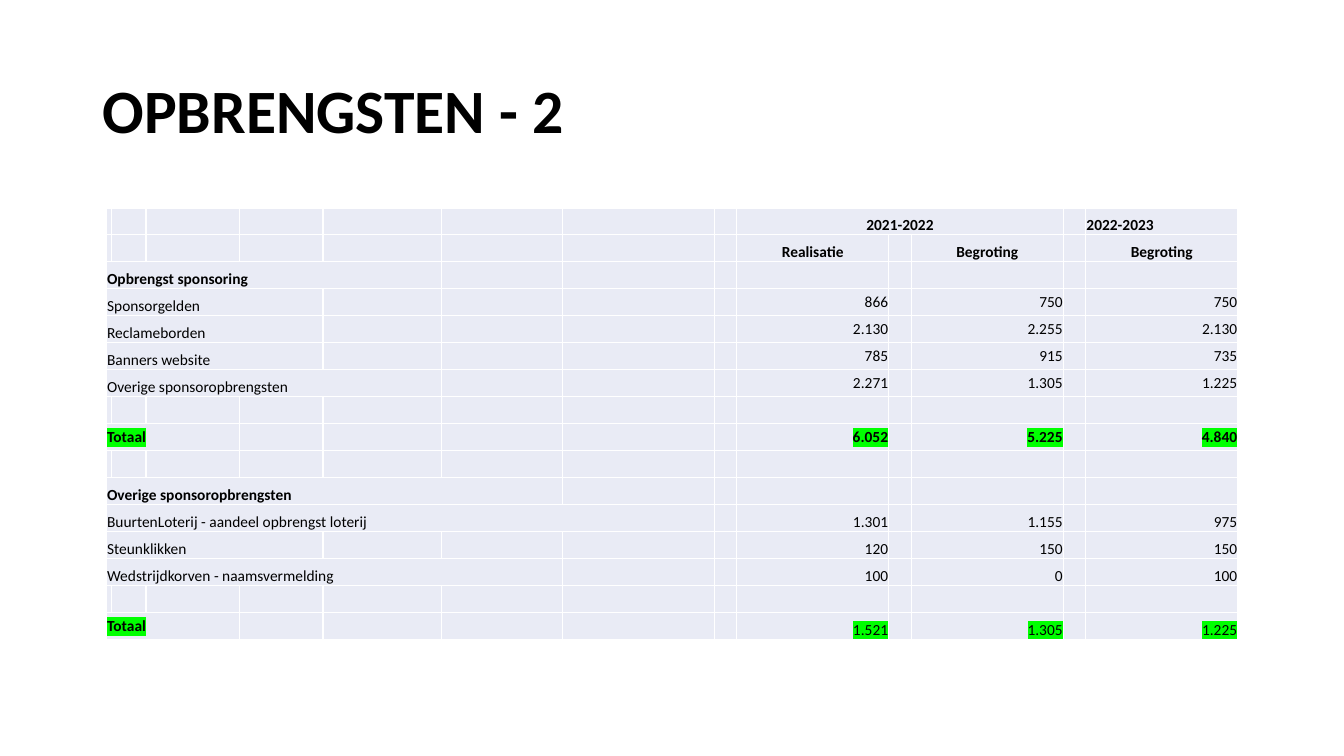
from lxml import etree
from pptx import Presentation
from pptx.dml.color import RGBColor
from pptx.enum import text
from pptx.oxml import ns
from pptx.util import Pt

BLACK = RGBColor(0x00, 0x00, 0x00)
PALE_BLUE = RGBColor(0xE9, 0xEB, 0xF5)
GREEN = RGBColor(0x00, 0xFF, 0x00)

LEFT, CENTER, RIGHT = text.PP_ALIGN.LEFT, text.PP_ALIGN.CENTER, text.PP_ALIGN.RIGHT
MIDDLE, BOTTOM = text.MSO_ANCHOR.MIDDLE, text.MSO_ANCHOR.BOTTOM

COL_WIDTHS = [3.6, 24.5, 67, 59.5, 84.4, 86.4, 108.7, 16, 108.7, 16, 108.7, 16, 108.7]
ROW_HEIGHT = 19.3
VALUE_COLS = [8, 10, 12]

# row: label, columns spanned, label anchor, label style, values, value anchor, value style
BOLD, PLAIN = {"bold": True}, {"bold": False}
BOLD_GREEN = {"bold": True, "highlight": GREEN}
PLAIN_GREEN = {"bold": False, "highlight": GREEN}
ROWS = {
    2: ("Opbrengst sponsoring", 5, BOTTOM, BOLD, [], MIDDLE, PLAIN),
    3: ("Sponsorgelden", 4, BOTTOM, PLAIN, ["866", "750", "750"], MIDDLE, PLAIN),
    4: ("Reclameborden", 4, BOTTOM, PLAIN, ["2.130", "2.255", "2.130"], MIDDLE, PLAIN),
    5: ("Banners website", 4, BOTTOM, PLAIN, ["785", "915", "735"], MIDDLE, PLAIN),
    6: ("Overige sponsoropbrengsten", 5, BOTTOM, PLAIN, ["2.271", "1.305", "1.225"], MIDDLE, PLAIN),
    8: ("Totaal", 3, MIDDLE, BOLD_GREEN, ["6.052", "5.225", "4.840"], MIDDLE, BOLD_GREEN),
    10: ("Overige sponsoropbrengsten", 6, BOTTOM, BOLD, [], BOTTOM, PLAIN),
    11: ("BuurtenLoterij - aandeel opbrengst loterij", 7, BOTTOM, PLAIN,
         ["1.301", "1.155", "975"], BOTTOM, PLAIN),
    12: ("Steunklikken", 4, BOTTOM, PLAIN, ["120", "150", "150"], BOTTOM, PLAIN),
    13: ("Wedstrijdkorven - naamsvermelding", 6, BOTTOM, PLAIN, ["100", "0", "100"], BOTTOM, PLAIN),
    15: ("Totaal", 3, MIDDLE, BOLD_GREEN, ["1.521", "1.305", "1.225"], BOTTOM, PLAIN_GREEN),
}


def add_run(p, words, size, bold=False, highlight=None):
    r = p.add_run()
    r.text = words
    r.font.color.rgb = BLACK
    for name, value in {"name": "Calibri", "size": Pt(size), "bold": bold}.items():
        setattr(r.font, name, value)
    if highlight is not None:
        mark = etree.Element(ns.qn("a:highlight"))
        etree.SubElement(mark, ns.qn("a:srgbClr"), val=str(highlight))
        r._r.rPr.find(ns.qn("a:solidFill")).addnext(mark)


def fill_cell(cell, words, align, anchor, style):
    cell.vertical_anchor = anchor
    p = cell.text_frame.paragraphs[0]
    p.alignment = align
    add_run(p, words, 11, **style)


prs = Presentation()
prs.slide_width, prs.slide_height = Pt(960), Pt(540)
s = prs.slides.add_slide(prs.slide_layouts[5])

title = s.shapes.title
for name, value in {"left": 66, "top": 28.75, "width": 828, "height": 104.4}.items():
    setattr(title, name, Pt(value))
tf = title.text_frame
tf.vertical_anchor = MIDDLE
p = tf.paragraphs[0]
p.alignment = LEFT
p.line_spacing = 0.9
add_run(p, "OPBRENGSTEN - 2", 44, bold=True)

row_count = 16
table = s.shapes.add_table(row_count, len(COL_WIDTHS), Pt(76), Pt(148.5),
                           Pt(sum(COL_WIDTHS)), Pt(ROW_HEIGHT * row_count)).table
table.first_row = False
table.horz_banding = False
for column, width in zip(table.columns, COL_WIDTHS):
    column.width = Pt(width)
for row in table.rows:
    row.height = Pt(ROW_HEIGHT)

cell_margins = {"margin_left": Pt(0.5), "margin_right": Pt(0.5),
                "margin_top": Pt(0.5), "margin_bottom": Pt(0)}
for cell in table.iter_cells():
    cell.fill.solid()
    cell.fill.fore_color.rgb = PALE_BLUE
    for name, value in cell_margins.items():
        setattr(cell, name, value)
    # keeps empty cells from stretching their row
    cell.text_frame.paragraphs[0]._p.get_or_add_endParaRPr().set("sz", "1100")

table.cell(0, 8).merge(table.cell(0, 10))
fill_cell(table.cell(0, 8), "2021-2022", CENTER, BOTTOM, BOLD)
fill_cell(table.cell(0, 12), "2022-2023", LEFT, BOTTOM, BOLD)
for col, heading in zip(VALUE_COLS, ["Realisatie", "Begroting", "Begroting"]):
    fill_cell(table.cell(1, col), heading, CENTER, BOTTOM, BOLD)

for i, (label, span, label_anchor, label_style, values, value_anchor, value_style) in ROWS.items():
    table.cell(i, 0).merge(table.cell(i, span - 1))
    fill_cell(table.cell(i, 0), label, LEFT, label_anchor, label_style)
    for col, value in zip(VALUE_COLS, values):
        fill_cell(table.cell(i, col), value, RIGHT, value_anchor, value_style)

prs.save("out.pptx")
